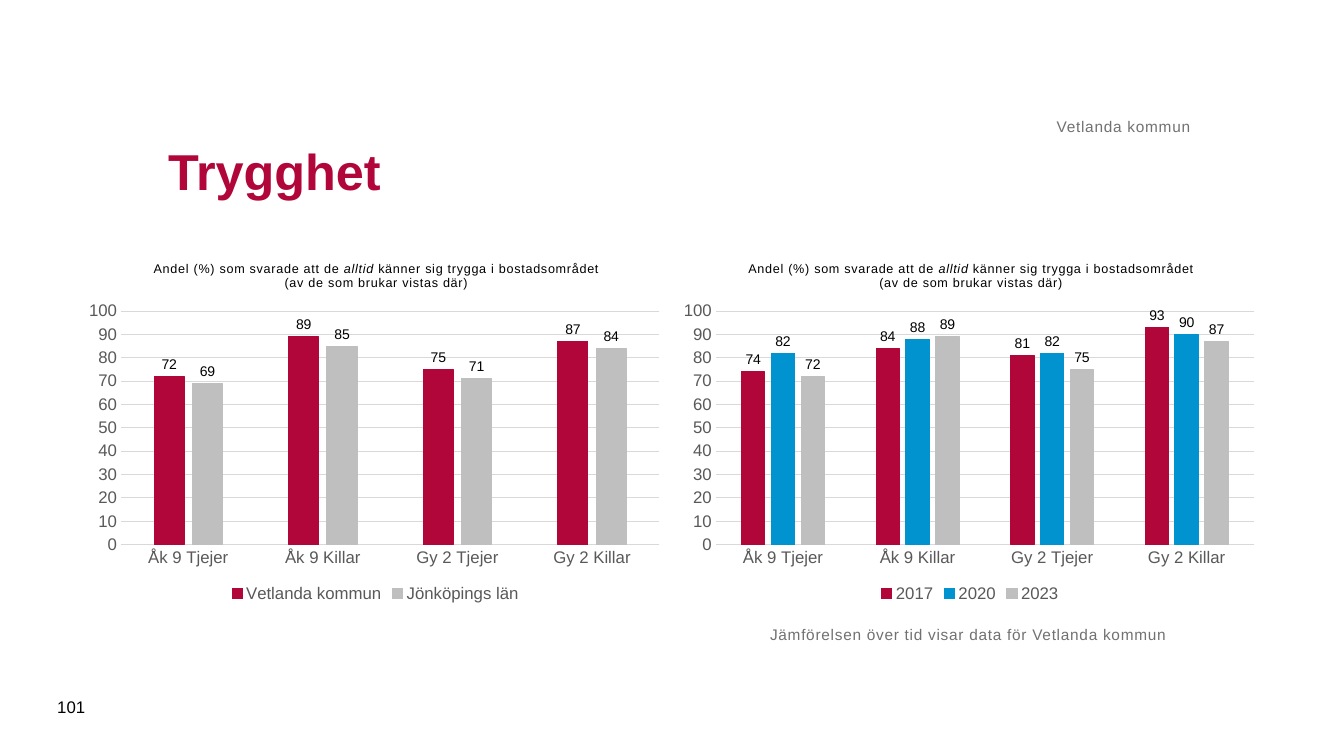
from dataclasses import dataclass

from lxml import etree
from pptx import Presentation
from pptx import util as u
from pptx.chart import data as cd
from pptx.dml.color import RGBColor
from pptx.enum import chart as ce, text as te
from pptx.oxml import ns

RED = RGBColor(0xB1, 0x06, 0x3A)
BLUE = RGBColor(0x00, 0x93, 0xD0)
SILVER = RGBColor(0xBF, 0xBF, 0xBF)
PALE = RGBColor(0xD9, 0xD9, 0xD9)
GREY = RGBColor(0x71, 0x71, 0x71)
DARK = RGBColor(0x59, 0x59, 0x59)
BLACK = RGBColor(0, 0, 0)

FACE = "Arial"
FORMAT = "#,##0;#,##0"
GROUPS = ["Åk 9 Tjejer", "Åk 9 Killar", "Gy 2 Tjejer", "Gy 2 Killar"]
HEADING = [
    [("Andel (%) som svarade att de ", False), ("alltid", True),
     (" känner sig trygga i bostadsområdet", False)],
    [("(av de som brukar vistas där)", False)],
]


@dataclass
class Bars:
    name: str
    values: list[int]
    color: RGBColor


@dataclass
class Panel:
    left: float
    bars: list[Bars]


@dataclass
class Label:
    text: str
    left: float
    top: float
    width: float
    height: float
    size: float
    color: RGBColor
    bold: bool = False
    spaced: bool = False
    inset: bool = True
    align: te.PP_ALIGN = te.PP_ALIGN.LEFT
    anchor: te.MSO_ANCHOR = te.MSO_ANCHOR.MIDDLE


PANELS = [
    Panel(56.9, [Bars("Vetlanda kommun", [72, 89, 75, 87], RED),
                 Bars("Jönköpings län", [69, 85, 71, 84], SILVER)]),
    Panel(481.7, [Bars("2017", [74, 84, 81, 93], RED),
                  Bars("2020", [82, 88, 82, 90], BLUE),
                  Bars("2023", [72, 89, 75, 87], SILVER)]),
]
LABELS = [
    Label("Trygghet", 113, 70.6, 737.3, 102.2, 36, RED, bold=True),
    Label("Jämförelsen över tid visar data för Vetlanda kommun",
          550, 446.4, 382.3, 67.7, 11, GREY, spaced=True, inset=False,
          anchor=te.MSO_ANCHOR.TOP),
    Label("Vetlanda kommun", 113, 44.6, 737.3, 52.6, 11, GREY, spaced=True,
          inset=False, align=te.PP_ALIGN.RIGHT, anchor=te.MSO_ANCHOR.BOTTOM),
    Label("101", 33.8, 490.3, 41, 28.8, 12, BLACK),
]


def style(font, size: float, color: RGBColor, bold: bool = False) -> None:
    font.name = FACE
    font.size = u.Pt(size)
    font.bold = bold
    font.color.rgb = color


def space(run) -> None:
    """Widen the letter gaps by half a point."""
    run.font._element.set("spc", "50")


def place(parent, **parts) -> None:
    """Fix a chart part at fractions of the chart area."""
    for old in parent.findall(ns.qn("c:layout")):
        parent.remove(old)
    layout = etree.Element(ns.qn("c:layout"))
    manual = etree.SubElement(layout, ns.qn("c:manualLayout"))
    for tag, value in parts.items():
        etree.SubElement(manual, ns.qn(f"c:{tag}")).set("val", str(value))
    words = parent.find(ns.qn("c:tx"))
    if words is None:
        parent.insert(0, layout)
    else:
        words.addnext(layout)


def add_heading(chart) -> None:
    chart.has_title = True
    frame = chart.chart_title.text_frame
    for index, line in enumerate(HEADING):
        para = frame.add_paragraph() if index else frame.paragraphs[0]
        para.alignment = te.PP_ALIGN.CENTER
        for words, slanted in line:
            run = para.add_run()
            run.text = words
            style(run.font, 9, BLACK)
            run.font.italic = slanted
            space(run)
    chart.chart_title.include_in_layout = False
    place(chart.chart_title._element, xMode="edge", yMode="edge", x=0.12, y=0.04)


def style_axes(chart) -> None:
    for axis in (chart.category_axis, chart.value_axis):
        axis.major_tick_mark = axis.minor_tick_mark = ce.XL_TICK_MARK.NONE
        style(axis.tick_labels.font, 12, DARK)
    base = chart.category_axis.format.line
    scale = chart.value_axis
    scale.minimum_scale, scale.maximum_scale, scale.major_unit = 0, 100, 10
    scale.tick_labels.number_format = FORMAT
    scale.tick_labels.number_format_is_linked = False
    scale.format.line.fill.background()
    scale.has_major_gridlines = True
    for line in (base, scale.major_gridlines.format.line):
        line.color.rgb = PALE
        line.width = u.Pt(0.75)


def add_panel(slide, panel: Panel) -> None:
    data = cd.CategoryChartData(number_format=FORMAT)
    data.categories = GROUPS
    for bars in panel.bars:
        data.add_series(bars.name, bars.values)
    chart = slide.shapes.add_chart(
        ce.XL_CHART_TYPE.COLUMN_CLUSTERED, u.Pt(panel.left), u.Pt(172.8),
        u.Pt(422.6), u.Pt(260.6), data).chart
    style(chart.font, 10, BLACK)
    add_heading(chart)
    style_axes(chart)

    # Columns and their values
    plot = chart.plots[0]
    plot.vary_by_categories = False
    plot.gap_width, plot.overlap = 219, -27
    for bars, series in zip(panel.bars, plot.series):
        series.format.fill.solid()
        series.format.fill.fore_color.rgb = bars.color
        series.format.line.color.rgb = bars.color
        series.format.line.width = u.Pt(0.75)
        marks = series.data_labels
        marks.show_value = True
        marks.position = ce.XL_LABEL_POSITION.OUTSIDE_END
        marks.number_format = FORMAT
        marks.number_format_is_linked = False
        style(marks.font, 10, BLACK)

    # Legend and plot area
    chart.has_legend = True
    chart.legend.position = ce.XL_LEGEND_POSITION.BOTTOM
    chart.legend.include_in_layout = False
    style(chart.legend.font, 12, DARK)
    area = chart._chartSpace.find(".//" + ns.qn("c:plotArea"))
    place(area, layoutTarget="inner", xMode="edge", yMode="edge",
          x=0.07, y=0.19, w=0.91, h=0.64)


def add_label(slide, label: Label) -> None:
    box = slide.shapes.add_textbox(u.Pt(label.left), u.Pt(label.top),
                                   u.Pt(label.width), u.Pt(label.height))
    frame = box.text_frame
    frame.word_wrap = True
    frame.vertical_anchor = label.anchor
    if not label.inset:
        frame.margin_left = frame.margin_right = u.Pt(0)
        frame.margin_top = frame.margin_bottom = u.Pt(0)
    frame.text = label.text
    para = frame.paragraphs[0]
    para.alignment = label.align
    for run in para.runs:
        style(run.font, label.size, label.color, label.bold)
        if label.spaced:
            space(run)


def main() -> None:
    deck = Presentation()
    deck.slide_width, deck.slide_height = u.Pt(960), u.Pt(540)
    slide = deck.slides.add_slide(deck.slide_layouts[6])
    for panel in PANELS:
        add_panel(slide, panel)
    for label in LABELS:
        add_label(slide, label)
    deck.save("out.pptx")


if __name__ == "__main__":
    main()
